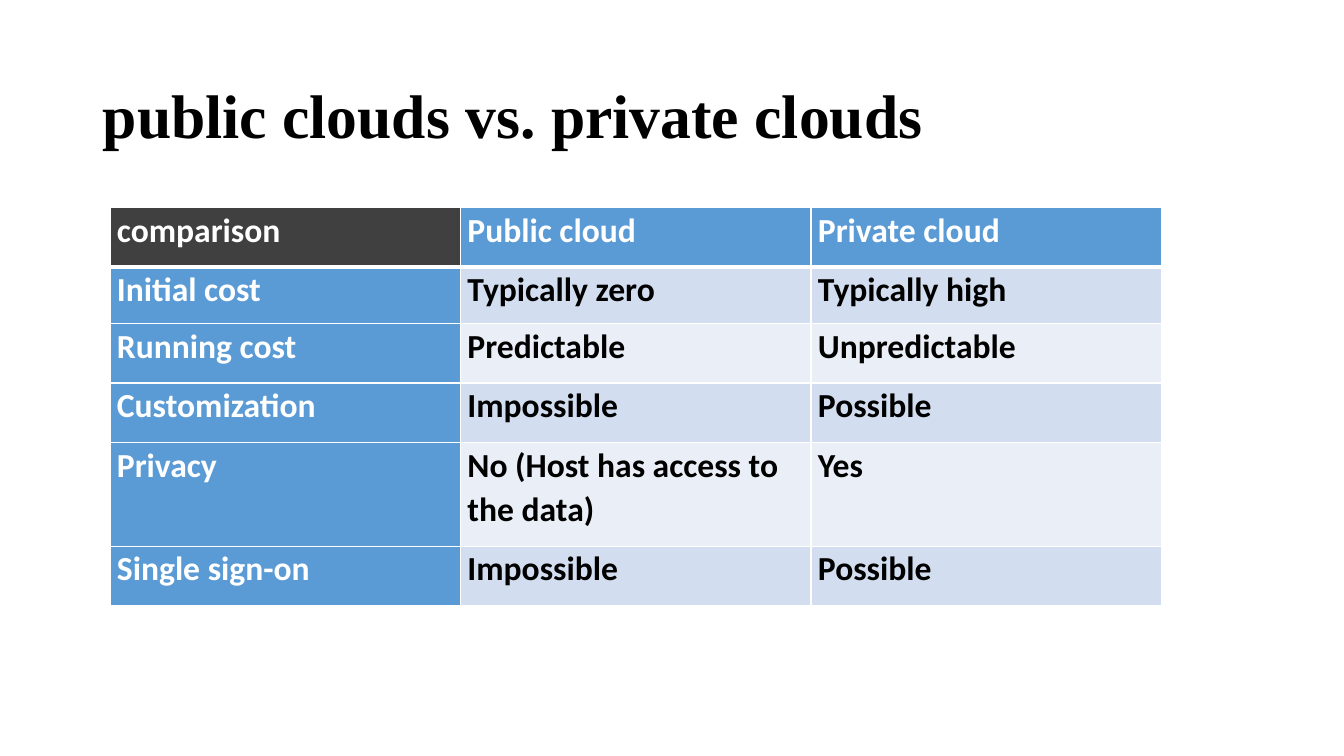
from lxml import etree
from pptx import Presentation
from pptx.dml.color import RGBColor
from pptx.enum.text import MSO_ANCHOR, PP_ALIGN
from pptx.oxml.ns import qn
from pptx.util import Inches, Pt

LEFT, MIDDLE = PP_ALIGN.LEFT, MSO_ANCHOR.MIDDLE
BLACK = RGBColor(0x00, 0x00, 0x00)
WHITE = RGBColor(0xFF, 0xFF, 0xFF)
CHARCOAL = RGBColor(0x40, 0x40, 0x40)
BLUE = RGBColor(0x5B, 0x9B, 0xD5)
BANDS = (RGBColor(0xD2, 0xDE, 0xEF), RGBColor(0xEA, 0xEF, 0xF7))

TITLE_BOX = (0.92, 0.4, 11.5, 1.45)
TABLE_BOX = (1.09, 2.06, 10.43, 3.95)
ROW_HEIGHTS = (0.59, 0.56, 0.59, 0.59, 1.03, 0.59)
COMPARISON = (
    ("comparison", "Public cloud", "Private cloud"),
    ("Initial cost", "Typically zero", "Typically high"),
    ("Running cost", "Predictable", "Unpredictable"),
    ("Customization", "Impossible", "Possible"),
    ("Privacy", "No (Host has access to the data)", "Yes"),
    ("Single sign-on", "Impossible", "Possible"),
)


def add_run(p, text, font, size, color):
    """Add a bold run to a left-aligned paragraph."""
    p.alignment = LEFT
    r = p.add_run()
    r.text = text
    r.font.name, r.font.size, r.font.bold = font, Pt(size), True
    r.font.color.rgb = color


def add_title(slide, box, text):
    """Place and format the title placeholder."""
    sp = slide.shapes.title
    sp.left, sp.top, sp.width, sp.height = map(Inches, box)
    tf = sp.text_frame
    tf.vertical_anchor = MIDDLE
    tf.word_wrap = True
    add_run(tf.paragraphs[0], text, "Times New Roman", 44, BLACK)


def set_borders(cell, top, bottom):
    """Draw white cell borders with the given top and bottom widths."""
    tc_pr = cell._tc.get_or_add_tcPr()
    for side, width in (("L", 1), ("R", 1), ("T", top), ("B", bottom)):
        ln = etree.SubElement(tc_pr, qn(f"a:ln{side}"), w=str(Pt(width)))
        fill = etree.SubElement(ln, qn("a:solidFill"))
        etree.SubElement(fill, qn("a:srgbClr"), val=str(WHITE))


def cell_fill(row, col):
    """Return the fill of a cell by its place in the table."""
    if row == col == 0:
        return CHARCOAL
    if row == 0 or col == 0:
        return BLUE
    return BANDS[(row - 1) % 2]


def format_cell(cell, row, col, text):
    """Fill one cell with its text, colours and borders."""
    cell.margin_left = cell.margin_right = Inches(0.07)
    cell.margin_top = cell.margin_bottom = 0
    set_borders(cell, 3 if row == 1 else 1, 3 if row == 0 else 1)
    cell.fill.solid()
    cell.fill.fore_color.rgb = cell_fill(row, col)
    p = cell.text_frame.paragraphs[0]
    p.line_spacing = 1.07
    add_run(p, text, "Calibri", 24, BLACK if row and col else WHITE)


def add_comparison(slide, box, rows, heights):
    """Build the comparison table with equal columns in the box."""
    cols = len(rows[0])
    table = slide.shapes.add_table(len(rows), cols, *map(Inches, box)).table
    for column in table.columns:
        column.width = Inches(box[2] / cols)
    for i, (texts, height) in enumerate(zip(rows, heights)):
        table.rows[i].height = Inches(height)
        for j, text in enumerate(texts):
            format_cell(table.cell(i, j), i, j, text)


def main():
    """Create the slide and save it."""
    prs = Presentation()
    prs.slide_width, prs.slide_height = Inches(13.33), Inches(7.5)
    slide = prs.slides.add_slide(prs.slide_layouts[5])
    add_title(slide, TITLE_BOX, "public clouds vs. private clouds")
    add_comparison(slide, TABLE_BOX, COMPARISON, ROW_HEIGHTS)
    prs.save("out.pptx")


if __name__ == "__main__":
    main()
